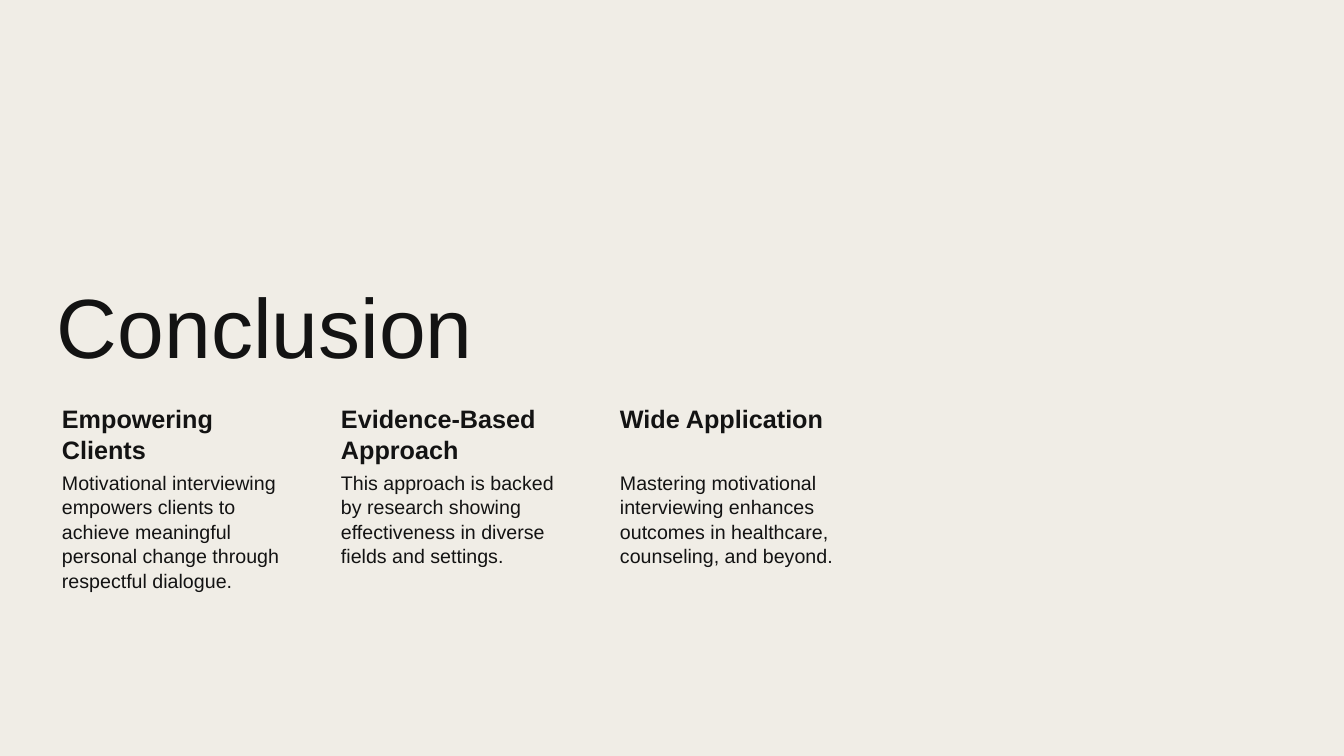
from pptx import Presentation
from pptx.dml.color import RGBColor
from pptx.enum.text import MSO_ANCHOR
from pptx.util import Pt

PX = 914400 / 100.8
INK = "131313"


def color(value):
    return RGBColor.from_string(value)


def add_text(slide, text, box, insets, size, spacing, bold=False, anchor=MSO_ANCHOR.TOP):
    shape = slide.shapes.add_textbox(*(round(length * PX) for length in box))
    frame = shape.text_frame
    frame.word_wrap = True
    frame.vertical_anchor = anchor
    frame.margin_left, frame.margin_top, frame.margin_right, frame.margin_bottom = (
        round(inset * PX) for inset in insets)
    paragraph = frame.paragraphs[0]
    paragraph.line_spacing = spacing
    run = paragraph.add_run()
    run.text = text
    run.font.name = "Arial"
    run.font.size = Pt(size)
    run.font.bold = bold
    run.font.color.rgb = color(INK)


# Slide and background
presentation = Presentation()
presentation.slide_width = round(1344 * PX)
presentation.slide_height = round(756 * PX)
slide = presentation.slides.add_slide(presentation.slide_layouts[6])
slide.background.fill.solid()
slide.background.fill.fore_color.rgb = color("F0EDE6")

# Title
LEFT = 47
add_text(slide, "Conclusion", (LEFT, 179, 812, 203), (10, 5, 10, 5), 60, 0.9,
         anchor=MSO_ANCHOR.BOTTOM)

# Three takeaways, each a heading above its explanation
COLUMN_WIDTH, COLUMN_STEP = 254, 279
HEADING_TOP, HEADING_HEIGHT, BODY_HEIGHT = 399, 69, 177
takeaways = [
    ("Empowering Clients",
     "Motivational interviewing empowers clients to achieve meaningful personal change "
     "through respectful dialogue."),
    ("Evidence-Based Approach",
     "This approach is backed by research showing effectiveness in diverse fields and settings."),
    ("Wide Application",
     "Mastering motivational interviewing enhances outcomes in healthcare, counseling, "
     "and beyond."),
]
for index, (heading, body) in enumerate(takeaways):
    left = LEFT + index * COLUMN_STEP
    add_text(slide, heading, (left, HEADING_TOP, COLUMN_WIDTH, HEADING_HEIGHT),
             (15, 3, 3, 3), 18, 1.04, bold=True)
    add_text(slide, body, (left, HEADING_TOP + HEADING_HEIGHT, COLUMN_WIDTH, BODY_HEIGHT),
             (15, 2, 2, 2), 14, 1.04)

presentation.save("out.pptx")
